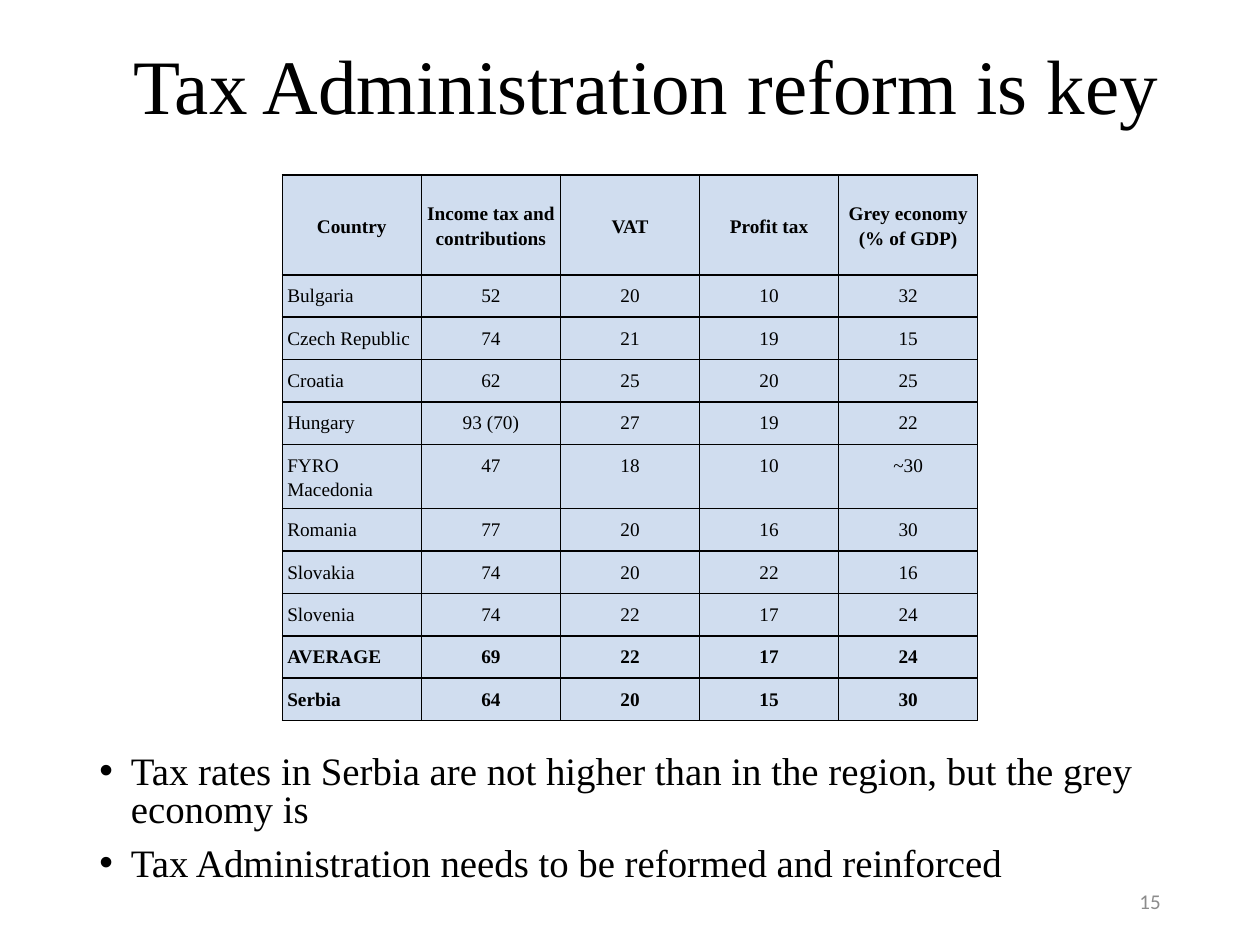
from dataclasses import dataclass

from lxml.etree import SubElement
from pptx import Presentation
from pptx.dml.color import RGBColor
from pptx.enum.text import MSO_ANCHOR, PP_ALIGN
from pptx.oxml.ns import qn
from pptx.util import Inches, Pt


@dataclass(frozen=True)
class Theme:
    serif: str = "Times New Roman"
    sans: str = "Calibri"
    ink: str = "000000"
    muted: str = "8C8C8C"
    cell: str = "D0DDEF"
    title: float = 44
    body: float = 22.2
    table: float = 11
    number: float = 12
    thin: float = 1
    thick: float = 1.5


@dataclass(frozen=True)
class TextBlock:
    box: tuple[float, float, float, float]
    lines: tuple[str, ...]
    size: float
    font: str
    color: str
    align: PP_ALIGN
    anchor: MSO_ANCHOR
    line_spacing: float = 1
    gap: float = 0
    bulleted: bool = False


@dataclass(frozen=True)
class CountryRow:
    values: tuple[str, ...]
    height: float
    bold: bool = False
    top: float = 1
    bottom: float = 1


THEME = Theme()
TABLE_LEFT, TABLE_TOP, TABLE_WIDTH, TABLE_HEIGHT = 2.24, 1.39, 5.52, 4.32
HEADER_HEIGHT, WRAPPED_HEIGHT = 0.79, 0.5
ROW_HEIGHT = (TABLE_HEIGHT - HEADER_HEIGHT - WRAPPED_HEIGHT) / 9
CELL_MARGINS = {
    "margin_left": Inches(0.04),
    "margin_right": Inches(0.04),
    "margin_top": Inches(0.06),
    "margin_bottom": Inches(0.06),
}

ROWS = (
    CountryRow(
        ("Country", "Income tax and contributions", "VAT", "Profit tax", "Grey economy (% of GDP)"),
        HEADER_HEIGHT, bold=True, bottom=THEME.thick,
    ),
    CountryRow(("Bulgaria", "52", "20", "10", "32"), ROW_HEIGHT, top=THEME.thick),
    CountryRow(("Czech Republic", "74", "21", "19", "15"), ROW_HEIGHT),
    CountryRow(("Croatia", "62", "25", "20", "25"), ROW_HEIGHT),
    CountryRow(("Hungary", "93 (70)", "27", "19", "22"), ROW_HEIGHT),
    CountryRow(("FYRO Macedonia", "47", "18", "10", "~30"), WRAPPED_HEIGHT),
    CountryRow(("Romania", "77", "20", "16", "30"), ROW_HEIGHT),
    CountryRow(("Slovakia", "74", "20", "22", "16"), ROW_HEIGHT),
    CountryRow(("Slovenia", "74", "22", "17", "24"), ROW_HEIGHT, bottom=THEME.thick),
    CountryRow(("AVERAGE", "69", "22", "17", "24"), ROW_HEIGHT, True, THEME.thick, THEME.thick),
    CountryRow(("Serbia", "64", "20", "15", "30"), ROW_HEIGHT, True, THEME.thick),
)

TEXTS = (
    TextBlock(
        (0.72, 0.25, 8.82, 0.92), ("Tax Administration reform is key",),
        THEME.title, THEME.serif, THEME.ink, PP_ALIGN.CENTER, MSO_ANCHOR.MIDDLE, 0.9,
    ),
    TextBlock(
        (0.69, 5.95, 8.62, 1.16),
        (
            "Tax rates in Serbia are not higher than in the region, but the grey economy is",
            "Tax Administration needs to be reformed and reinforced",
        ),
        THEME.body, THEME.serif, THEME.ink, PP_ALIGN.LEFT, MSO_ANCHOR.TOP, 0.8, 10, True,
    ),
    TextBlock(
        (7.06, 6.95, 2.25, 0.4), ("15",),
        THEME.number, THEME.sans, THEME.muted, PP_ALIGN.RIGHT, MSO_ANCHOR.MIDDLE,
    ),
)


def apply(target, settings: dict) -> None:
    for name, value in settings.items():
        setattr(target, name, value)


def write(paragraph, text: str, size: float, font: str, color: str, bold: bool = False) -> None:
    run = paragraph.add_run()
    run.text = text
    apply(run.font, {"size": Pt(size), "name": font, "bold": bold})
    run.font.color.rgb = RGBColor.from_string(color)


def add_bullet(paragraph) -> None:
    properties = paragraph._p.get_or_add_pPr()
    properties.set("marL", str(Inches(0.25)))
    properties.set("indent", str(-Inches(0.25)))
    SubElement(properties, qn("a:buFont"), typeface="Arial")
    SubElement(properties, qn("a:buChar"), char="•")


def draw_text(slide, block: TextBlock) -> None:
    frame = slide.shapes.add_textbox(*map(Inches, block.box)).text_frame
    apply(frame, {"word_wrap": True, "vertical_anchor": block.anchor})
    for index, line in enumerate(block.lines):
        paragraph = frame.add_paragraph() if index else frame.paragraphs[0]
        apply(paragraph, {
            "alignment": block.align,
            "line_spacing": block.line_spacing,
            "space_before": Pt(block.gap if index else 0),
        })
        if block.bulleted:
            add_bullet(paragraph)
        write(paragraph, line, block.size, block.font, block.color)


def draw_borders(cell, widths: dict[str, float]) -> None:
    properties = cell._tc.get_or_add_tcPr()
    for side, width in widths.items():
        line = SubElement(properties, qn(f"a:ln{side}"), w=str(Pt(width)))
        SubElement(SubElement(line, qn("a:solidFill")), qn("a:srgbClr"), val=THEME.ink)


def draw_cell(cell, text: str, row: CountryRow, align: PP_ALIGN, anchor: MSO_ANCHOR) -> None:
    apply(cell, CELL_MARGINS | {"vertical_anchor": anchor})
    draw_borders(cell, {"L": THEME.thin, "R": THEME.thin, "T": row.top, "B": row.bottom})
    cell.fill.solid()
    cell.fill.fore_color.rgb = RGBColor.from_string(THEME.cell)
    paragraph = cell.text_frame.paragraphs[0]
    apply(paragraph, {"alignment": align, "line_spacing": 1.15})
    write(paragraph, text, THEME.table, THEME.serif, THEME.ink, row.bold)


def draw_tax_table(slide, rows: tuple[CountryRow, ...]) -> None:
    columns = len(rows[0].values)
    place = map(Inches, (TABLE_LEFT, TABLE_TOP, TABLE_WIDTH, TABLE_HEIGHT))
    tax_table = slide.shapes.add_table(len(rows), columns, *place).table
    apply(tax_table, {"first_row": False, "horz_banding": False})
    for r, row in enumerate(rows):
        tax_table.rows[r].height = Inches(row.height)
        for c, value in enumerate(row.values):
            align = PP_ALIGN.JUSTIFY if r and c == 0 else PP_ALIGN.CENTER
            anchor = MSO_ANCHOR.TOP if r else MSO_ANCHOR.MIDDLE
            draw_cell(tax_table.cell(r, c), value, row, align, anchor)


def main() -> None:
    """Build the tax reform slide."""
    deck = Presentation()
    apply(deck, {"slide_width": Inches(10), "slide_height": Inches(7.5)})
    slide = deck.slides.add_slide(deck.slide_layouts[6])
    draw_tax_table(slide, ROWS)
    for block in TEXTS:
        draw_text(slide, block)
    deck.save("out.pptx")


if __name__ == "__main__":
    main()
